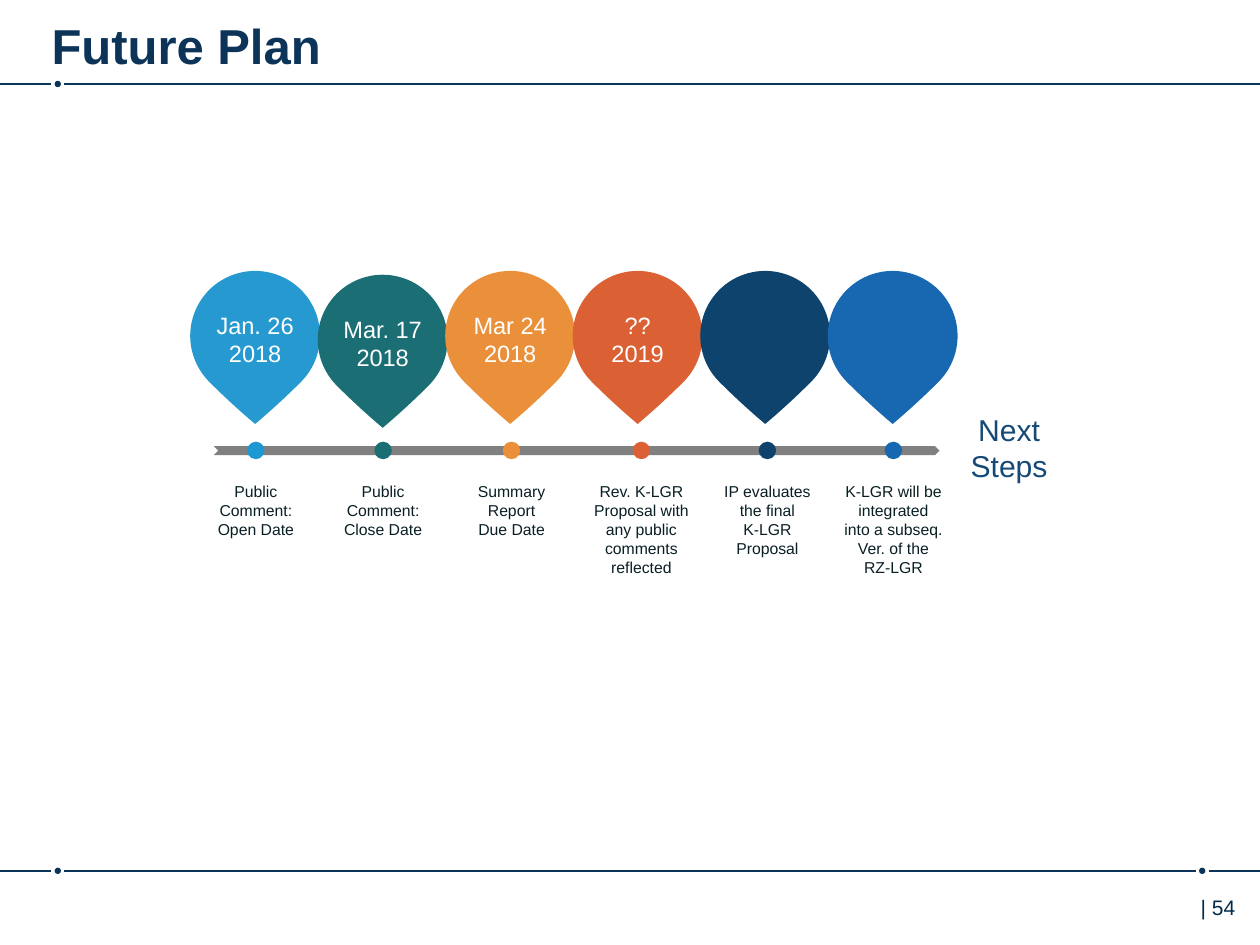
from pptx import Presentation
from pptx.dml.color import RGBColor
from pptx.enum.shapes import MSO_CONNECTOR, MSO_SHAPE
from pptx.enum.text import MSO_AUTO_SIZE, PP_ALIGN
from pptx.oxml.ns import qn
from pptx.util import Pt
from lxml.etree import SubElement

COLORS = {
    "navy": "0C3458", "number": "002B49", "gray": "808080", "sky": "2599D0",
    "sky_dot": "1D98D3", "teal": "1B6F74", "amber": "EA903A", "orange": "DB6033",
    "deep": "0D436C", "blue": "1768B1", "white": "FFFFFF", "ink": "0A1F24",
    "next": "154A78",
}

STEPS = [
    ("sky", "sky_dot", 37.5, 0, ["Jan. 26", "2018"], ["Public Comment: Open Date"]),
    ("teal", "teal", 110.2, 2.2, ["Mar. 17", "2018"], ["Public Comment:", "Close Date"]),
    ("amber", "amber", 183.6, 0, ["Mar 24", "2018"], ["Summary Report", "Due Date"]),
    ("orange", "orange", 257.8, 0, ["??", "2019"],
     ["Rev. K-LGR Proposal with any public comments reflected"]),
    ("deep", "deep", 329.8, 0, [], ["IP evaluates the final", "K-LGR Proposal"]),
    ("blue", "blue", 401.8, 0, [],
     ["K-LGR will be integrated into a subseq. Ver. of the RZ-LGR"]),
]
LABEL_HEIGHTS = [40.3, 40.3, 40.3, 61.9, 51.1, 72.7]


def add_shape(page, kind, left, top, width, height, color):
    """Draw a flat filled preset shape."""
    shape = page.shapes.add_shape(kind, Pt(left), Pt(top), Pt(width), Pt(height))
    shape.shadow.inherit = False
    shape.fill.solid()
    shape.fill.fore_color.rgb = RGBColor.from_string(COLORS[color])
    shape.line.fill.background()
    return shape


def add_dot(page, center, middle, size, color):
    """Draw a round dot about its centre."""
    add_shape(page, MSO_SHAPE.OVAL, center - size / 2, middle - size / 2, size, size, color)


def add_text(page, left, top, width, height, lines, color, size,
             align=PP_ALIGN.CENTER, bold=False, **frame_format):
    """Write one paragraph per line in a wrapping text box."""
    box = page.shapes.add_textbox(Pt(left), Pt(top), Pt(width), Pt(height))
    frame = box.text_frame
    for name, value in {"word_wrap": True, **frame_format}.items():
        setattr(frame, name, value)
    for index, line in enumerate(lines):
        para = frame.add_paragraph() if index else frame.paragraphs[0]
        para.alignment = align
        span = para.add_run()
        span.text = line
        for name, value in {"name": "Arial", "size": Pt(size), "bold": bold}.items():
            setattr(span.font, name, value)
        span.font.color.rgb = RGBColor.from_string(COLORS[color])


def add_rule(page, left, middle, width, dots):
    """Draw a horizontal rule broken around each of its dots."""
    gap = 3.6
    starts = [left] + [left + dot + gap for dot in dots]
    ends = [left + dot - gap for dot in dots] + [left + width]
    for start, end in zip(starts, ends):
        rule = page.shapes.add_connector(
            MSO_CONNECTOR.STRAIGHT, Pt(start), Pt(middle), Pt(end), Pt(middle))
        rule.line.width = Pt(1)
        rule.line.color.rgb = RGBColor.from_string(COLORS["navy"])
        SubElement(rule._element.spPr, qn("a:effectLst"))
    for dot in dots:
        add_dot(page, left + dot, middle, 3.6, "navy")


def add_header(page, left, top, width):
    """Place the title above its rule."""
    add_text(page, left + 29.5, top + 3.6, 630.7, 35.3, ["Future Plan"], "navy", 28,
             PP_ALIGN.LEFT, True, margin_left=0, margin_right=0, margin_top=Pt(5))
    add_rule(page, left, top + 48, width, [33])


def add_footer(page, left, top, width):
    """Place the bottom rule and the page number."""
    add_rule(page, left, top, width, [33, 687])
    add_text(page, left + 669, top + 10, 44, 28.8, ["| 54"], "number", 12, PP_ALIGN.RIGHT)


def add_timeline(page, left, top):
    """Place the bar with a pin, a dot and a label for each step."""
    pin_size, pitch, text_width, middle = 74.2, 72.86, 70.6, 102.6
    fit = {"auto_size": MSO_AUTO_SIZE.SHAPE_TO_FIT_TEXT,
           "margin_left": Pt(6.8), "margin_right": Pt(6.8)}
    add_shape(page, MSO_SHAPE.CHEVRON, left + 13.5, top + middle - 2.5, 414.7, 5.2, "gray")
    for index, (color, dot_color, center, drop, date, label) in enumerate(STEPS):
        pin_left, pin_top = left + index * pitch, top + drop
        pin = add_shape(page, MSO_SHAPE.TEAR, pin_left, pin_top, pin_size, pin_size, color)
        pin.rotation = 135
        pin.adjustments[0] = 0.96
        add_dot(page, left + center, top + middle, 10, dot_color)
        if date:
            add_text(page, pin_left + (pin_size - text_width) / 2, pin_top + 19.4,
                     text_width, 40.3, date, "white", 13.5, **fit)
        add_text(page, left + center - text_width / 2, top + 116.8,
                 text_width, LABEL_HEIGHTS[index], label, "ink", 9, **fit)


def add_next_steps(page, left, top):
    """Place the caption at the end of the timeline."""
    add_text(page, left, top, 76.3, 49, ["Next", "Steps"], "next", 17.2,
             auto_size=MSO_AUTO_SIZE.SHAPE_TO_FIT_TEXT)


def main():
    """Build and save the deck."""
    deck = Presentation()
    deck.slide_width, deck.slide_height = Pt(720), Pt(540)
    page = deck.slides.add_slide(deck.slide_layouts[6])
    add_header(page, 0, 0, 720)
    add_footer(page, 0, 497.6, 720)
    add_timeline(page, 108.7, 154.8)
    add_next_steps(page, 538.5, 231.5)
    deck.save("out.pptx")


if __name__ == "__main__":
    main()
